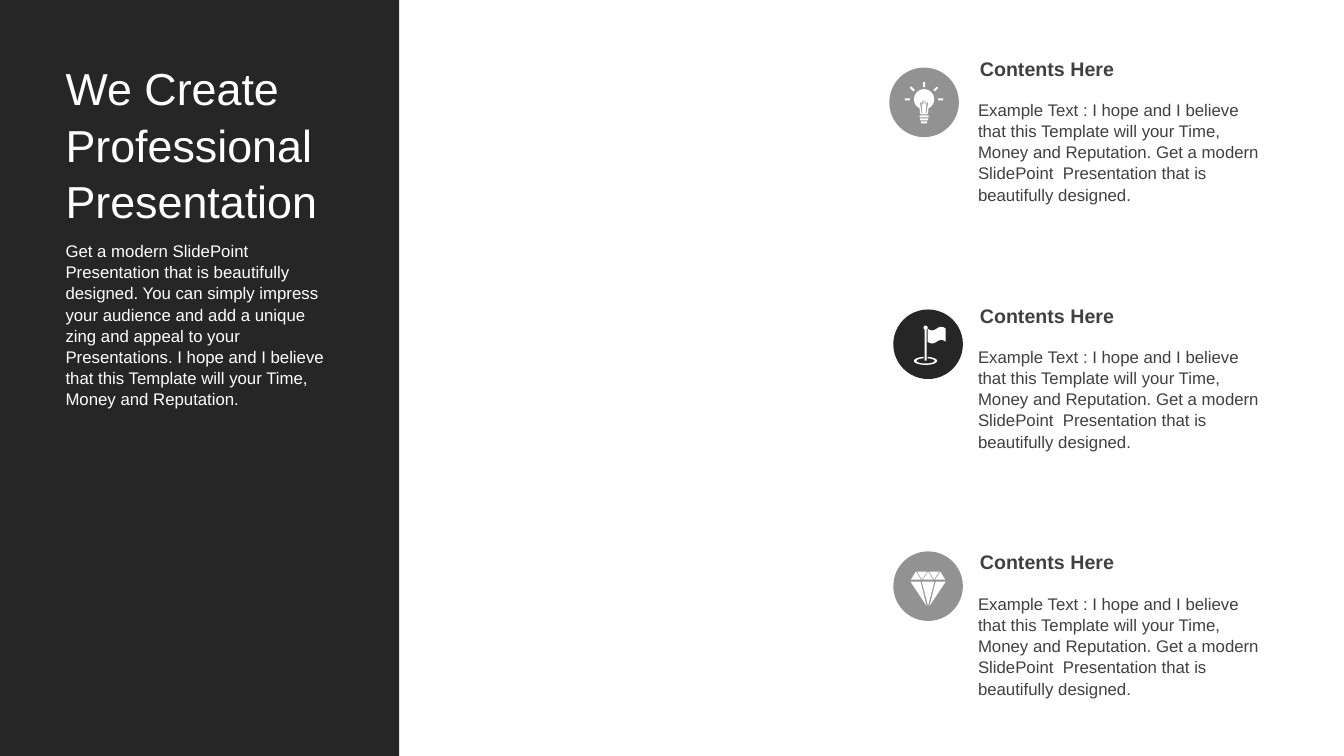
import math
import pptx
import pptx.util
import pptx.dml.color
import pptx.enum.shapes
from dataclasses import dataclass
from pptx.util import Inches


@dataclass(frozen=True)
class Theme:
    """Colours and type sizes of the slide."""
    font: str = "Arial"
    dark: str = "262626"
    gray: str = "929292"
    ink: str = "404040"
    white: str = "FFFFFF"
    title: int = 32
    head: int = 14
    body: int = 12
    pitch: float = 1.05


THEME = Theme()
SHAPE = pptx.enum.shapes.MSO_SHAPE
INTRO = ("Get a modern SlidePoint  Presentation that is beautifully designed. "
         "You can simply impress your audience and add a unique zing and appeal "
         "to your Presentations. I hope and I believe that this Template will "
         "your Time, Money and Reputation.")
ITEM = ("Example Text : I hope and I believe that this Template will your Time, "
        "Money and Reputation. Get a modern SlidePoint  Presentation that is "
        "beautifully designed.")


def color(code):
    """Turn a hex code into a colour."""
    return pptx.dml.color.RGBColor.from_string(code)


def paint(shape, code):
    """Fill a shape flat, with no line or shadow."""
    shape.shadow.inherit = False
    shape.fill.solid()
    shape.fill.fore_color.rgb = color(code)
    shape.line.fill.background()


def solid(slide, kind, box, code):
    """Add a flat preset shape."""
    paint(slide.shapes.add_shape(kind, *map(Inches, box)), code)


def write(slide, box, lines, size, code, bold=False, pads=(0.08, 0.05, 0.12, 0.05)):
    """Add a wrapped text box with one paragraph per line."""
    frame = slide.shapes.add_textbox(*map(Inches, box)).text_frame
    frame.word_wrap = True
    (frame.margin_left, frame.margin_top,
     frame.margin_right, frame.margin_bottom) = map(Inches, pads)
    frame.text = "\n".join(lines)
    for para in frame.paragraphs:
        para.line_spacing = THEME.pitch
        para.font.name = THEME.font
        para.font.size = pptx.util.Pt(size)
        para.font.bold = bold
        para.font.color.rgb = color(code)


def arc(x, y, wide, high, start=0, end=360):
    """List points along an elliptic arc, angles in degrees."""
    turns = [math.radians(start + (end - start) * n / 40) for n in range(41)]
    return [(x + wide * math.cos(t), y + high * math.sin(t)) for t in turns]


def rect(x, y, wide, high):
    """List the corners of a rectangle."""
    return [(x, y), (x + wide, y), (x + wide, y + high), (x, y + high)]


def mirror(points):
    """Flip points about the vertical axis."""
    return [(-x, y) for x, y in points]


def ray(angle):
    """Outline one ray of light around the bulb."""
    turn = math.radians(angle)
    cos, sin = math.cos(turn), math.sin(turn)
    near, far = (14 * cos, 12 * sin - 3), (19 * cos, 17 * sin - 3)
    return [(x - side * sin, y + side * cos)
            for (x, y), side in ((near, 1), (far, 1), (far, -1), (near, -1))]


def bulb():
    """Outline a light bulb, in hundredths of an inch."""
    head = arc(0, -3, 10, 10, 116, 424) + [(4, 11), (3, 12), (-3, 12), (-4, 11)]
    leg = [(-4, 0), (-2.6, 0), (-1.6, 11), (-2.4, 11)]
    prongs = [rect(x - 0.3, -2, 0.6, 4) for x in (-1.5, 0, 1.5)]
    base = [rect(-w, y, 2 * w, 2) for w, y in ((4.5, 13), (4, 16), (3, 19))]
    rays = [ray(a) for a in range(180, 361, 45)]
    return [head, leg, mirror(leg)] + prongs + base + rays


def flag():
    """Outline a flag on a pole, in hundredths of an inch."""
    wave = [(x - 0.5, -15.5 + 1.8 * math.sin(math.tau * x / 18)) for x in range(19)]
    cloth = wave + [(x, y + 13) for x, y in reversed(wave)]
    ring = (arc(-2.5, 16.5, 11.5, 4, -80, 260)
            + arc(-2.5, 16.5, 9, 2.6, 257, -77))
    return [cloth, ring, arc(-2.5, -16.5, 2, 2), rect(-3.5, -14.6, 2, 31)]


def gem():
    """Outline a cut diamond, in hundredths of an inch."""
    side = [(-17.5, -4.5), (-7.5, -4.5), (-1.5, 19.5)]
    core = [(-6.3, -4.5), (6.3, -4.5), (0, 19.5)]
    ups = [[(x, -14.5), (x + 5, -6.5), (x - 5, -6.5)] for x in (-12, 0, 12)]
    downs = [[(x - 5, -14.5), (x + 5, -14.5), (x, -6.5)] for x in (-6, 6)]
    return [side, mirror(side), core] + ups + downs


def badge(slide, left, top, code, paths):
    """Draw a disc with a white icon at its centre."""
    size = 0.69
    solid(slide, SHAPE.OVAL, (left, top, size, size), code)
    spots = [[(Inches(left + size / 2 + x / 100), Inches(top + size / 2 + y / 100))
              for x, y in points] for points in paths]
    pen = slide.shapes.build_freeform(*spots[0][0], scale=1.0)
    pen.add_line_segments(spots[0][1:], close=True)
    for points in spots[1:]:
        pen.move_to(*points[0])
        pen.add_line_segments(points[1:], close=True)
    paint(pen.convert_to_shape(), THEME.white)


def panel(slide, left, top, wide, high):
    """Draw the dark side panel with title and intro."""
    solid(slide, SHAPE.RECTANGLE, (left, top, wide, high), THEME.dark)
    write(slide, (left + 0.57, top + 0.58, 2.79, 1.62),
          ["We Create", "Professional Presentation"], THEME.title, THEME.white,
          pads=(0.08, 0, 0.04, 0))
    write(slide, (left + 0.57, top + 2.33, 2.79, 1.72), [INTRO],
          THEME.body, THEME.white)


def entry(slide, left, top, wide):
    """Write one heading with its text."""
    write(slide, (left, top, wide, 0.34), ["Contents Here"], THEME.head,
          THEME.ink, True, (0.1, 0.05, 0.12, 0.05))
    write(slide, (left, top + 0.43, wide, 1.11), [ITEM], THEME.body, THEME.ink)


def main():
    """Build and save the slide."""
    deck = pptx.Presentation()
    deck.slide_width, deck.slide_height = Inches(13.33), Inches(7.5)
    slide = deck.slides.add_slide(deck.slide_layouts[6])
    panel(slide, 0, 0, 3.96, 7.5)
    icons = ((8.82, THEME.gray, bulb), (8.86, THEME.dark, flag),
             (8.86, THEME.gray, gem))
    for row, (left, code, icon) in enumerate(icons):
        entry(slide, 9.62, 0.5 + 2.45 * row, 3.01)
        badge(slide, left, 0.67 + 2.4 * row, code, icon())
    deck.save("out.pptx")


if __name__ == "__main__":
    main()
